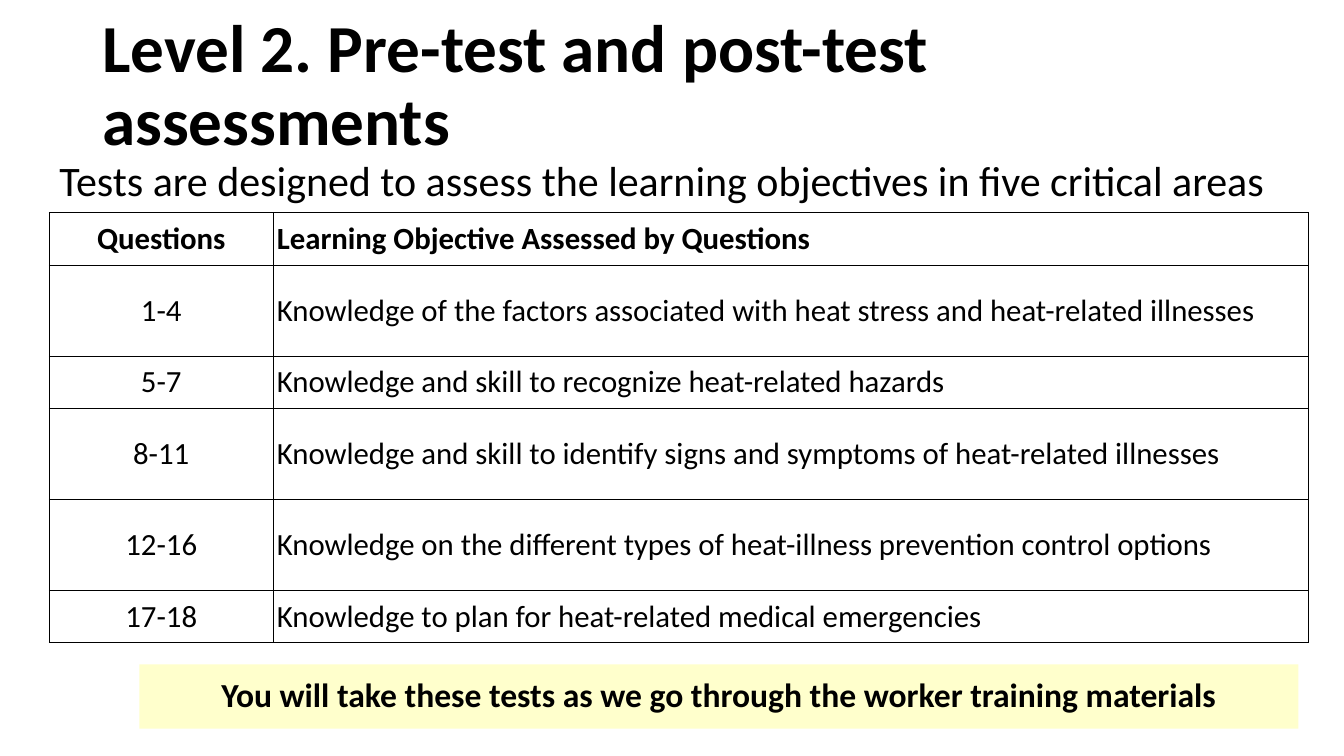
"""Build the slide on pre-test and post-test assessments."""
from lxml import etree
from pptx import Presentation
from pptx.dml.color import RGBColor
from pptx.enum import shapes, text
from pptx.oxml.ns import qn
from pptx.util import Pt

COLORS = {"ink": "000000", "paper": "FFFFFF", "note": "FFFFCC"}
FONT = "Calibri"
LEFT, CENTER = text.PP_ALIGN.LEFT, text.PP_ALIGN.CENTER
TOP, MIDDLE = text.MSO_ANCHOR.TOP, text.MSO_ANCHOR.MIDDLE


def write(tf, words, size, bold=False, align=LEFT, spacing=None, before=0):
    p = tf.paragraphs[0]
    p.text = words
    p.alignment = align
    p.line_spacing = spacing
    p.space_before = Pt(before)
    p.font.name = FONT
    p.font.size = Pt(size)
    p.font.bold = bold
    p.font.color.rgb = RGBColor.from_string(COLORS["ink"])


def add_borders(cell):
    tcPr = cell._tc.get_or_add_tcPr()
    for i, side in enumerate(("a:lnL", "a:lnR", "a:lnT", "a:lnB")):
        ln = etree.Element(qn(side), w=str(Pt(1)))
        fill = etree.SubElement(ln, qn("a:solidFill"))
        etree.SubElement(fill, qn("a:srgbClr"), val=COLORS["ink"])
        tcPr.insert(i, ln)


prs = Presentation()
prs.slide_width, prs.slide_height = Pt(960), Pt(540)
s = prs.slides.add_slide(prs.slide_layouts[6])

title = s.shapes.add_textbox(Pt(66), Pt(28.75), Pt(828), Pt(67))
note = s.shapes.add_shape(shapes.MSO_SHAPE.RECTANGLE, Pt(99.5), Pt(474.5), Pt(828), Pt(46))
note.shadow.inherit = False
note.fill.solid()
note.fill.fore_color.rgb = RGBColor.from_string(COLORS["note"])
note.line.fill.background()
intro = s.shapes.add_textbox(Pt(35.3), Pt(110.9), Pt(899.3), Pt(41))

texts = [
    (title, "Level 2. Pre-test and post-test assessments", 48, True, LEFT, 0, MIDDLE),
    (note, "You will take these tests as we go through the worker training materials",
     24, True, CENTER, 10, MIDDLE),
    (intro, "Tests are designed to assess the learning objectives in five critical areas",
     30, False, LEFT, 10, TOP),
]
for sp, words, size, bold, align, before, anchor in texts:
    tf = sp.text_frame
    tf.word_wrap = True
    tf.vertical_anchor = anchor
    write(tf, words, size, bold, align, 0.9, before)

SHORT, TALL = 37.4, 65
rows = [
    (SHORT, "Questions", "Learning Objective Assessed by Questions"),
    (TALL, "1-4", "Knowledge of the factors associated with heat stress and heat-related illnesses"),
    (SHORT, "5-7", "Knowledge and skill to recognize heat-related hazards"),
    (TALL, "8-11", "Knowledge and skill to identify signs and symptoms of heat-related illnesses"),
    (TALL, "12-16", "Knowledge on the different types of heat-illness prevention control options"),
    (SHORT, "17-18", "Knowledge to plan for heat-related medical emergencies"),
]
height = sum(row[0] for row in rows)
table = s.shapes.add_table(len(rows), 2, Pt(35.3), Pt(152), Pt(899.3), Pt(height)).table
table.columns[0].width, table.columns[1].width = Pt(159.8), Pt(739.5)
for r, (row_height, *words) in enumerate(rows):
    table.rows[r].height = Pt(row_height)
    for c, align in enumerate((CENTER, LEFT)):
        cell = table.cell(r, c)
        cell.fill.solid()
        cell.fill.fore_color.rgb = RGBColor.from_string(COLORS["paper"])
        cell.vertical_anchor = MIDDLE
        cell.margin_left = cell.margin_right = Pt(2.7)
        cell.margin_top = cell.margin_bottom = 0
        write(cell.text_frame, words[c], 22, r == 0, align)
        add_borders(cell)

prs.save("out.pptx")
